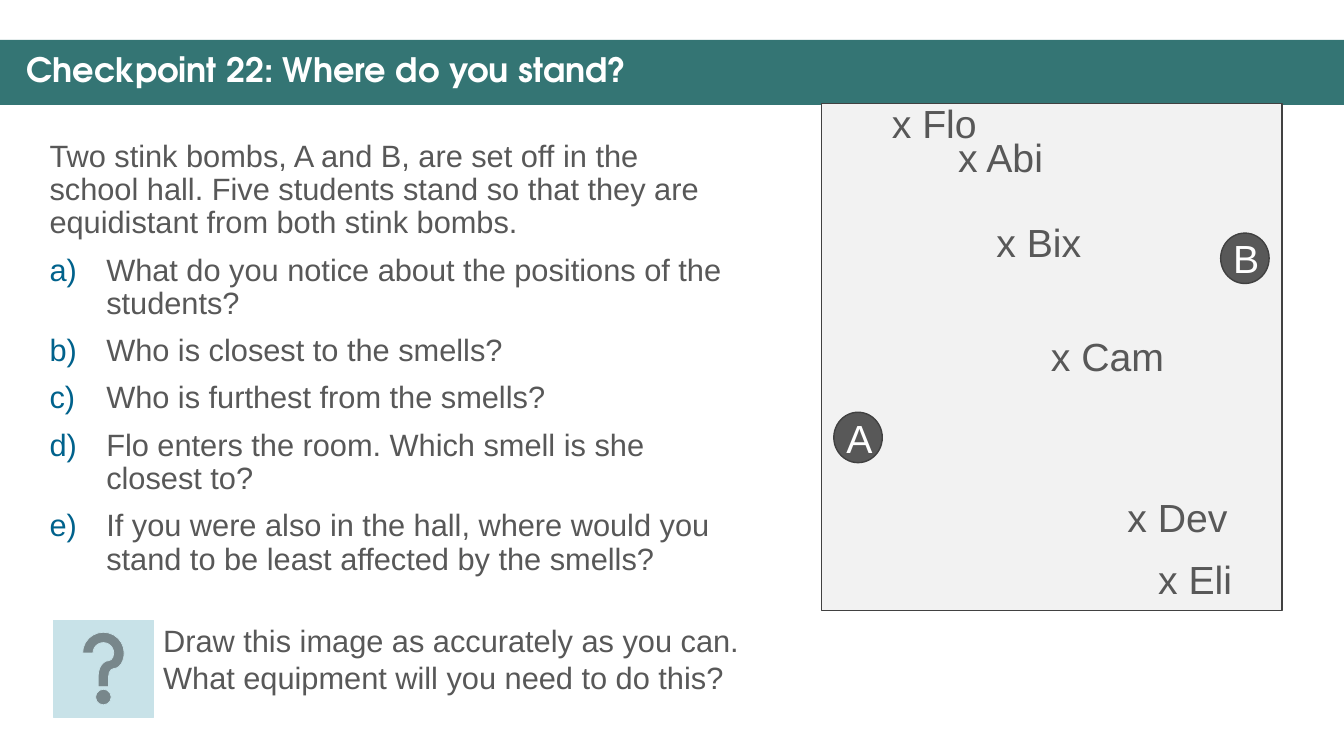
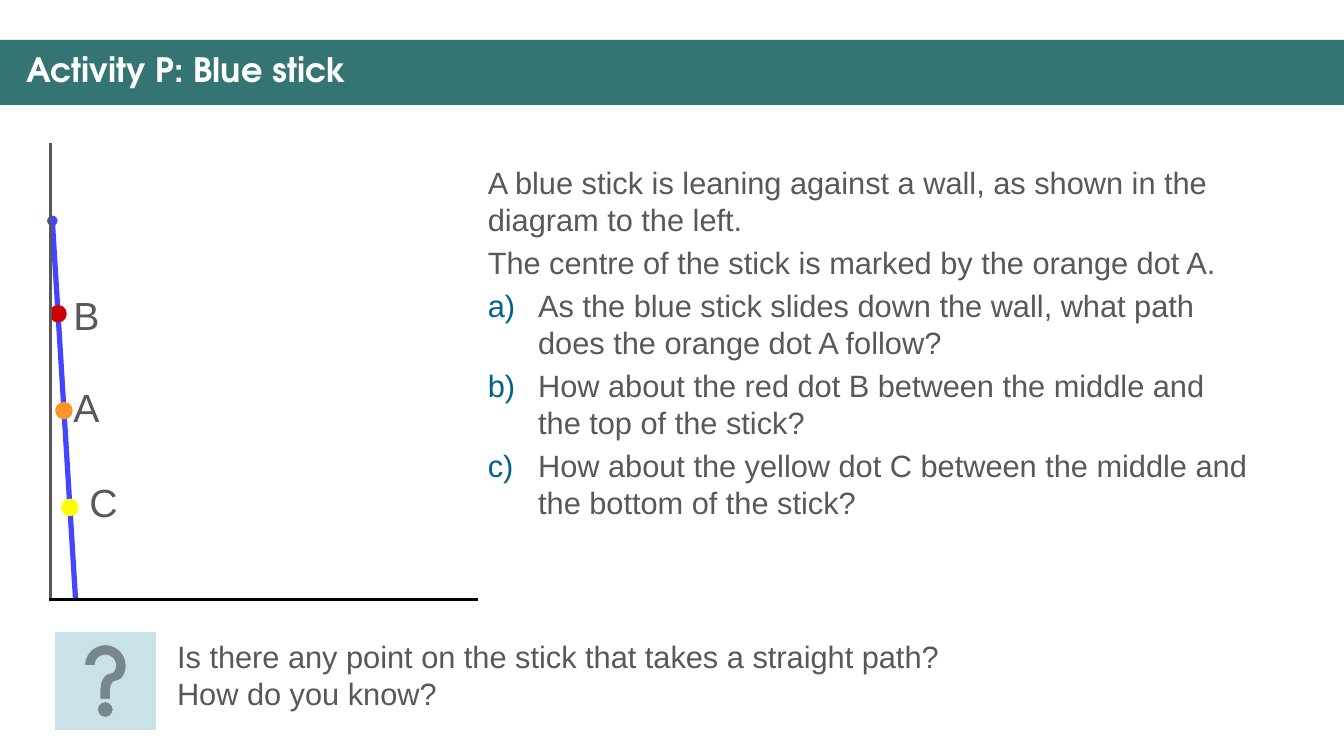
from lxml.etree import SubElement
from pptx import Presentation
from pptx.dml.color import RGBColor
from pptx.enum.shapes import MSO_CONNECTOR, MSO_SHAPE
from pptx.enum.text import MSO_ANCHOR, MSO_AUTO_SIZE, PP_ALIGN
from pptx.oxml.ns import qn
from pptx.util import Pt

TEAL = RGBColor(0x34, 0x75, 0x74)
WHITE = RGBColor(0xFF, 0xFF, 0xFF)
BLACK = RGBColor(0, 0, 0)
GREY = RGBColor(0x58, 0x58, 0x58)
OUTLINE = RGBColor(0x41, 0x41, 0x41)
HALL_GREY = RGBColor(0xF2, 0xF2, 0xF2)
PALE_BLUE = RGBColor(0xC8, 0xE2, 0xE8)
NUMBER_BLUE = RGBColor(0x00, 0x62, 0x8C)
STICK_BLUE = RGBColor(0x45, 0x45, 0xFF)
ORANGE = RGBColor(0xFC, 0x95, 0x24)
RED = RGBColor(0xCC, 0x00, 0x00)
YELLOW = RGBColor(0xFF, 0xFF, 0x00)

BODY_FONT = "Arial"
TITLE_FONT = "TeX Gyre Adventor"
TITLE_BAND = (0, 28.4, 960, 46.6)
BODY_SIZE = 22
LABEL_SIZE = 28
LABEL_HEIGHT = 41

CHECKPOINT = {
    "title": "Checkpoint 22: Where do you stand?",
    "box": (28.2, 97, 499, 315),
    "intro": [
        "Two stink bombs, A and B, are set off in the school hall. Five students "
        "stand so that they are equidistant from both stink bombs.",
    ],
    "questions": [
        "What do you notice about the positions of the students?",
        "Who is closest to the smells?",
        "Who is furthest from the smells?",
        "Flo enters the room. Which smell is she closest to?",
        "If you were also in the hall, where would you stand to be least "
        "affected by the smells?",
    ],
    "indent": 40.5,
    "line_spacing": 0.9,
    "gap": 10,
    "icon": (38.2, 443),
    "prompt": "Draw this image as accurately as you can. What equipment will you "
              "need to do this?",
    "prompt_box": (109.5, 440.6, 477, 60.5),
}
STICK = {
    "title": "Activity P: Blue stick",
    "box": (341.2, 113.3, 560, 268.6),
    "intro": [
        "A blue stick is leaning against a wall, as shown in the diagram to the left.",
        "The centre of the stick is marked by the orange dot A.",
    ],
    "questions": [
        "As the blue stick slides down the wall, what path does the orange dot A follow?",
        "How about the red dot B between the middle and the top of the stick?",
        "How about the yellow dot C between the middle and the bottom of the stick?",
    ],
    "indent": 36,
    "line_spacing": 1.0,
    "gap": 4.4,
    "icon": (39.6, 451.9),
    "prompt": "Is there any point on the stick that takes a straight path? "
              "How do you know?",
    "prompt_box": (119.4, 452.2, 577.4, 60.5),
}

HALL = (586.8, 74, 329, 362)
BOMB_SIZE = (34.6, 36)
BOMBS = [("B", 871.9, 166.5), ("A", 595.6, 294.5)]
STUDENTS = [
    ("Abi", 677.3, 91.8),
    ("Bix", 704.7, 152.3),
    ("Cam", 743.6, 233.6),
    ("Dev", 798.3, 348.8),
    ("Eli", 820.2, 393.1),
    ("Flo", 630, 67.3),
]

STICK_TOP = (37.4, 157.7)
STICK_FOOT = (54, 428.9)
DOT_SIZE = 11.5
DOTS = [
    ("A", ORANGE, 0.5, 45.4, 270),
    ("B", RED, 0.245, 45.4, 204.5),
    ("C", YELLOW, 0.755, 56.7, 338.4),
]


def points(values):
    return [Pt(value) for value in values]


def place(shape, box):
    shape.left, shape.top, shape.width, shape.height = points(box)


def set_font(paragraph, size, color, name=BODY_FONT, bold=False):
    font = paragraph.font
    font.name, font.size, font.bold = name, Pt(size), bold
    font.color.rgb = color


def set_fill(shape, color):
    shape.fill.solid()
    shape.fill.fore_color.rgb = color


def add_filled(slide, kind, box, fill, line, line_width=1):
    shape = slide.shapes.add_shape(kind, *points(box))
    shape.shadow.inherit = False
    set_fill(shape, fill)
    shape.line.color.rgb = line
    shape.line.width = Pt(line_width)
    return shape


def add_line(slide, start, end, color, width):
    line = slide.shapes.add_connector(MSO_CONNECTOR.STRAIGHT, *points(start + end))
    line.line.color.rgb = color
    line.line.width = Pt(width)
    SubElement(line.element.spPr, qn("a:effectLst"))
    return line


def add_text(slide, text, box, size):
    frame = slide.shapes.add_textbox(*points(box)).text_frame
    frame.word_wrap = True
    frame.text = text
    set_font(frame.paragraphs[0], size, GREY)


def set_numbering(paragraph, indent):
    properties = paragraph._p.get_or_add_pPr()
    properties.set("marL", str(Pt(indent)))
    properties.set("indent", str(-Pt(indent)))
    if indent:
        color = SubElement(properties, qn("a:buClr"))
        SubElement(color, qn("a:srgbClr"), val=str(NUMBER_BLUE))
        SubElement(properties, qn("a:buAutoNum"), type="alphaLcParenR")
    else:
        SubElement(properties, qn("a:buNone"))


def fill_title(title, text):
    place(title, TITLE_BAND)
    set_fill(title, TEAL)
    frame = title.text_frame
    frame.auto_size = MSO_AUTO_SIZE.NONE
    frame.vertical_anchor = MSO_ANCHOR.TOP
    frame.margin_left, frame.margin_top = Pt(18.7), Pt(9.8)
    frame.text = text
    paragraph = frame.paragraphs[0]
    paragraph.alignment = PP_ALIGN.LEFT
    paragraph.line_spacing = 0.9
    set_font(paragraph, 24, WHITE, TITLE_FONT, True)


def fill_body(body, content):
    place(body, content["box"])
    frame = body.text_frame
    frame.auto_size = MSO_AUTO_SIZE.NONE
    frame.text = "\n".join(content["intro"] + content["questions"])
    for index, paragraph in enumerate(frame.paragraphs):
        numbered = index >= len(content["intro"])
        set_numbering(paragraph, content["indent"] if numbered else 0)
        paragraph.line_spacing = content["line_spacing"]
        paragraph.space_before = Pt(content["gap"] if index else 0)
        set_font(paragraph, BODY_SIZE, GREY)


def add_slide(presentation, content):
    slide = presentation.slides.add_slide(presentation.slide_layouts[1])
    fill_title(slide.shapes.title, content["title"])
    fill_body(slide.placeholders[1], content)
    add_filled(slide, MSO_SHAPE.ACTION_BUTTON_HELP, content["icon"] + (71.3, 69.1),
               PALE_BLUE, PALE_BLUE, 0.5)
    add_text(slide, content["prompt"], content["prompt_box"], BODY_SIZE)
    return slide


def draw_hall(slide):
    add_filled(slide, MSO_SHAPE.RECTANGLE, HALL, HALL_GREY, OUTLINE)
    for name, left, top in BOMBS:
        bomb = add_filled(slide, MSO_SHAPE.OVAL, (left, top) + BOMB_SIZE, GREY, OUTLINE)
        frame = bomb.text_frame
        frame.margin_left, frame.margin_right = Pt(2), 0
        frame.margin_top = frame.margin_bottom = 0
        frame.word_wrap = False
        frame.vertical_anchor = MSO_ANCHOR.MIDDLE
        frame.text = name
        frame.paragraphs[0].alignment = PP_ALIGN.CENTER
        set_font(frame.paragraphs[0], LABEL_SIZE, WHITE)
    for name, left, top in STUDENTS:
        add_text(slide, f"x {name}", (left, top, 100, LABEL_HEIGHT), LABEL_SIZE)


def draw_stick(slide):
    stick = add_line(slide, STICK_TOP, STICK_FOOT, STICK_BLUE, 3.75)
    SubElement(stick.line._get_or_add_ln(), qn("a:headEnd"),
               type="oval", w="sm", len="sm")
    for name, color, share, left, top in DOTS:
        x, y = (start + share * (end - start) - DOT_SIZE / 2
                for start, end in zip(STICK_TOP, STICK_FOOT))
        add_filled(slide, MSO_SHAPE.OVAL, (x, y, DOT_SIZE, DOT_SIZE), color, color)
        add_text(slide, name, (left, top, 36, LABEL_HEIGHT), LABEL_SIZE)
    add_line(slide, (36, 102.2), (36, 428.2), GREY, 1.75)
    add_line(slide, (341.3, 428.2), (35.3, 428.2), BLACK, 1.75)


def main():
    presentation = Presentation()
    presentation.slide_width, presentation.slide_height = Pt(960), Pt(540)
    draw_hall(add_slide(presentation, CHECKPOINT))
    draw_stick(add_slide(presentation, STICK))
    presentation.save("out.pptx")


if __name__ == "__main__":
    main()
